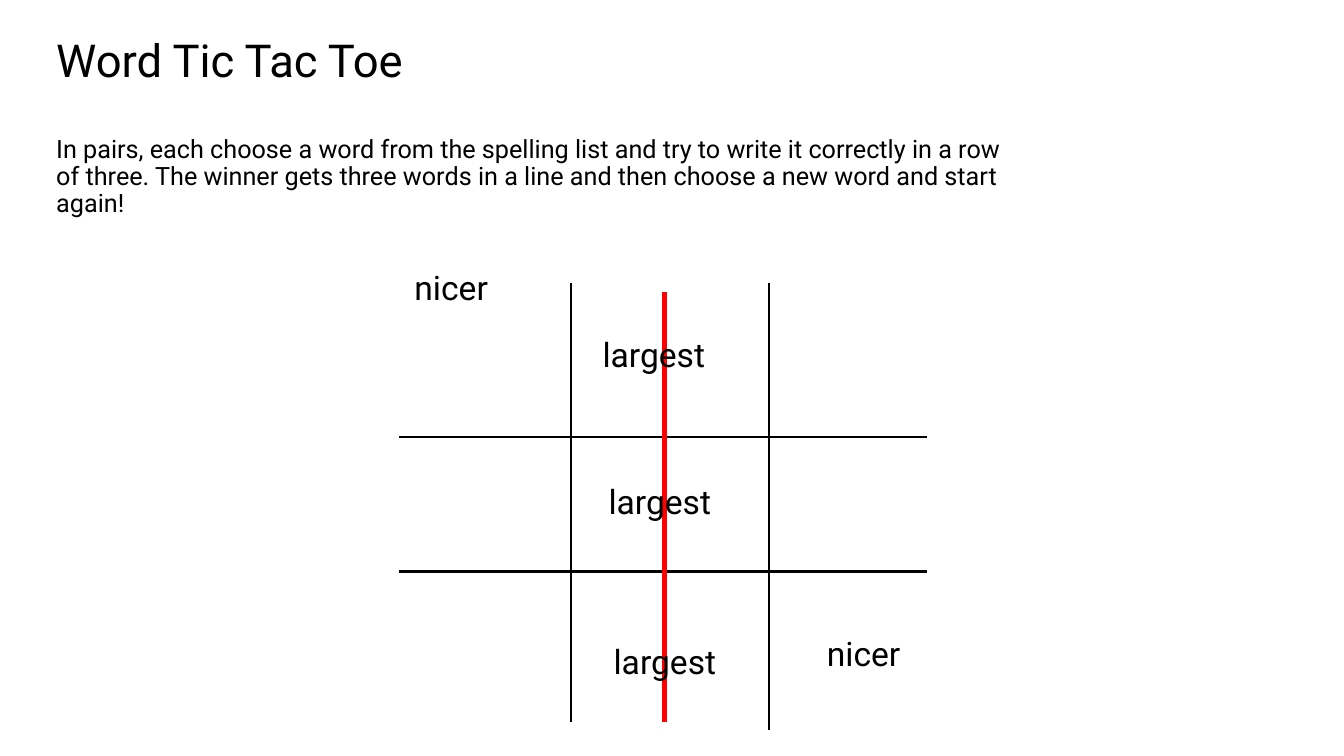
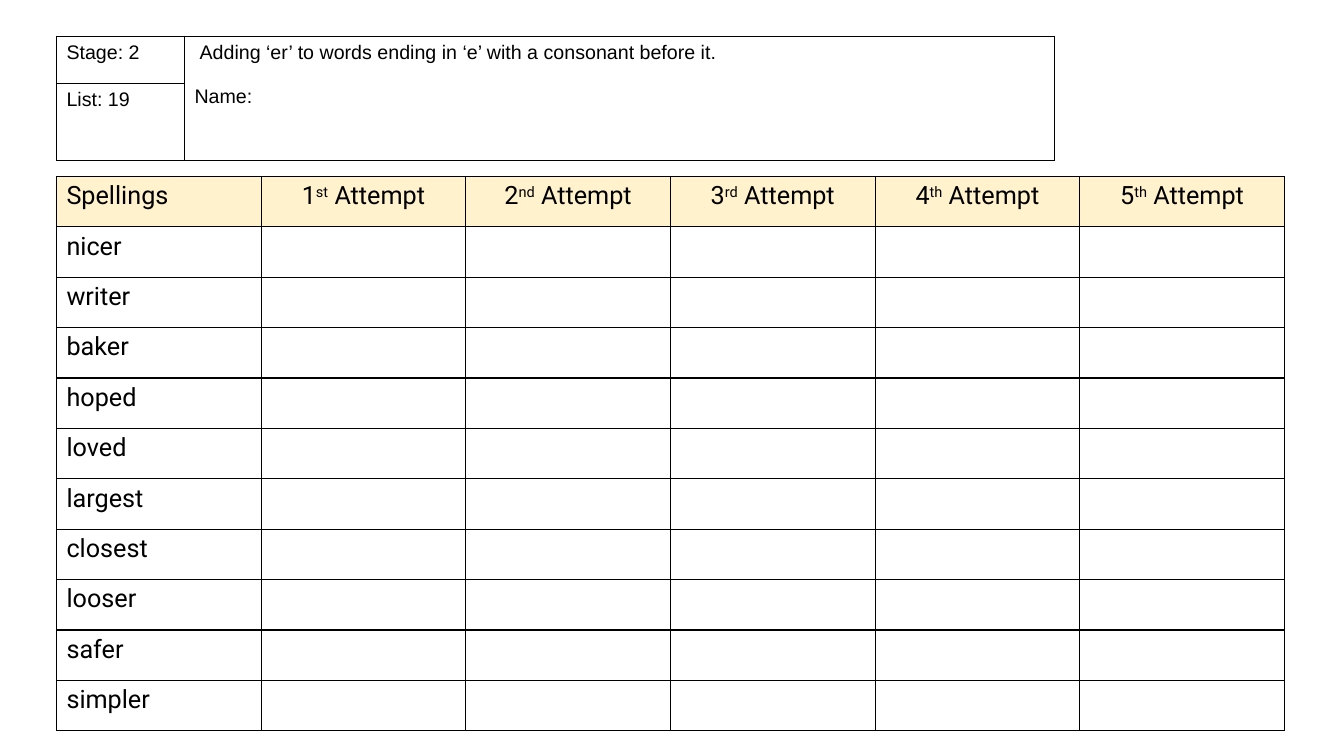
from lxml import etree
from pptx import Presentation
from pptx.dml.color import RGBColor
from pptx.enum.shapes import MSO_CONNECTOR, MSO_SHAPE
from pptx.enum.text import MSO_ANCHOR, PP_ALIGN
from pptx.oxml.ns import qn
from pptx.util import Emu, Inches, Pt

COLOURS = {"ink": "000000", "paper": "FFFFFF", "strike": "FF0000", "header": "FFF2CC"}
FONT, FORM_FONT = "Roboto", "Arial"
LEFT, CENTER = PP_ALIGN.LEFT, PP_ALIGN.CENTER
MIDDLE = MSO_ANCHOR.MIDDLE
STRAIGHT = MSO_CONNECTOR.STRAIGHT
RECTANGLE = MSO_SHAPE.RECTANGLE

# Tic tac toe grid: line positions and (left, top, width, word) entries
VERTICALS = [(5.66, 7.16), (7.63, 7.24)]
HORIZONTALS = [4.34, 5.67]
MOVES = [
    (3.56, 2.6, 1.83, "nicer"),
    (5.6, 3.26, 1.77, "largest"),
    (5.66, 4.72, 1.77, "largest"),
    (5.71, 6.31, 1.77, "largest"),
    (7.65, 6.23, 1.83, "nicer"),
]
SPELLINGS = ["nicer", "writer", "baker", "hoped", "loved",
             "largest", "closest", "looser", "safer", "simpler"]
ORDINALS = ["st", "nd", "rd", "th", "th"]


def rgb(name):
    return RGBColor.from_string(COLOURS[name])


def style_paragraph(paragraph, size, font=FONT, align=LEFT):
    paragraph.alignment = align
    for run in paragraph.runs:
        run.font.size = Pt(size)
        run.font.name = font
        run.font.color.rgb = rgb("ink")


def add_page(prs):
    """Blank slide with the shared translucent panel."""
    slide = prs.slides.add_slide(prs.slide_layouts[6])
    panel = slide.shapes.add_shape(
        RECTANGLE, Inches(0.17), Inches(0.15), Inches(13), Inches(7.22))
    panel.shadow.inherit = False
    panel.fill.solid()
    panel.fill.fore_color.rgb = rgb("paper")
    colour = panel.fill._xPr.find(qn("a:solidFill"))[0]
    etree.SubElement(colour, qn("a:alpha")).set("val", "90000")
    panel.line.color.rgb = rgb("paper")
    panel.line.width = Pt(1)
    return slide


def add_text(slide, left, top, width, height, text, size, align=LEFT,
             anchor=None, spacing=None):
    box = slide.shapes.add_textbox(
        Inches(left), Inches(top), Inches(width), Inches(height))
    frame = box.text_frame
    frame.word_wrap = True
    frame.vertical_anchor = anchor
    frame.text = text
    frame.paragraphs[0].line_spacing = spacing
    style_paragraph(frame.paragraphs[0], size, align=align)


def add_line(slide, x1, y1, x2, y2, colour="ink", width=1.5):
    line = slide.shapes.add_connector(
        STRAIGHT, Inches(x1), Inches(y1), Inches(x2), Inches(y2))
    line.line.color.rgb = rgb(colour)
    line.line.width = Pt(width)
    etree.SubElement(line._element.spPr, qn("a:effectLst"))


def border_cell(cell):
    properties = cell._tc.get_or_add_tcPr()
    for position, side in enumerate(("lnL", "lnR", "lnT", "lnB")):
        edge = etree.Element(qn(f"a:{side}"), w=str(Pt(1)))
        fill = etree.SubElement(edge, qn("a:solidFill"))
        etree.SubElement(fill, qn("a:srgbClr"), val=COLOURS["ink"])
        properties.insert(position, edge)


def add_grid(slide, left, top, widths, heights):
    """Plain table with black borders and no fill."""
    table = slide.shapes.add_table(
        len(heights), len(widths), Inches(left), Inches(top),
        Inches(sum(widths)), Inches(sum(heights))).table
    table.first_row = table.horz_banding = False
    for column, width in zip(table.columns, widths):
        column.width = Inches(width)
    for row, height in zip(table.rows, heights):
        row.height = Inches(height)
    for cell in table.iter_cells():
        cell.fill.background()
        border_cell(cell)
    return table


def fill_cell(cell, text, size=18, font=FONT):
    cell.text_frame.text = text
    for paragraph in cell.text_frame.paragraphs:
        style_paragraph(paragraph, size, font)


def fill_attempt(cell, number, ordinal):
    paragraph = cell.text_frame.paragraphs[0]
    for part in (str(number), ordinal, " Attempt"):
        paragraph.add_run().text = part
    style_paragraph(paragraph, 18, align=CENTER)
    paragraph.runs[1].font._element.set("baseline", "30000")


def build_game(prs):
    slide = add_page(prs)
    add_text(slide, 0.46, 0.35, 9.6, 0.55, "Word Tic Tac Toe", 32.4,
             anchor=MIDDLE, spacing=0.9)
    add_text(slide, 0.46, 1.31, 9.6, 0.9,
             "In pairs, each choose a word from the spelling list and try to "
             "write it correctly in a row of three. The winner gets three words "
             "in a line and then choose a new word and start again!", 18,
             anchor=MIDDLE, spacing=0.9)

    # Grid and winning line
    for x, bottom in VERTICALS:
        add_line(slide, x, 2.81, x, bottom)
    for y in HORIZONTALS:
        add_line(slide, 3.96, y, 9.19, y)
    add_line(slide, 6.59, 2.9, 6.59, 7.16, "strike", 3)

    for left, top, width, word in MOVES:
        add_text(slide, left, top, width, 0.5, word, 24, CENTER)


def build_spelling_sheet(prs):
    slide = add_page(prs)

    # Attempts table
    attempts = add_grid(slide, 0.56, 1.75, [2.03] * (len(ORDINALS) + 1),
                        [0.5] * (len(SPELLINGS) + 1))
    for row, word in enumerate(["Spellings"] + SPELLINGS):
        fill_cell(attempts.cell(row, 0), word)
    for number, ordinal in enumerate(ORDINALS, start=1):
        fill_attempt(attempts.cell(0, number), number, ordinal)
    for cell in attempts.rows[0].cells:
        cell.fill.solid()
        cell.fill.fore_color.rgb = rgb("header")

    # List details
    details = add_grid(slide, 0.56, 0.36, [1.27, 8.63], [0.47, 0.76])
    rule = details.cell(0, 1)
    rule.merge(details.cell(1, 1))
    fill_cell(details.cell(0, 0), "Stage: 2", 14, FORM_FONT)
    fill_cell(details.cell(1, 0), "List: 19", 14, FORM_FONT)
    fill_cell(rule, "Adding ‘er’ to words ending in ‘e’ with a consonant "
                    "before it.\nName:", 14, FORM_FONT)
    topic, name = rule.text_frame.paragraphs
    topic._p.get_or_add_pPr().set("marL", str(Emu(Inches(0.05))))
    name.space_before = Pt(16)


def main():
    prs = Presentation()
    prs.slide_width, prs.slide_height = Inches(13.33), Inches(7.5)
    build_game(prs)
    build_spelling_sheet(prs)
    prs.save("out.pptx")


if __name__ == "__main__":
    main()
